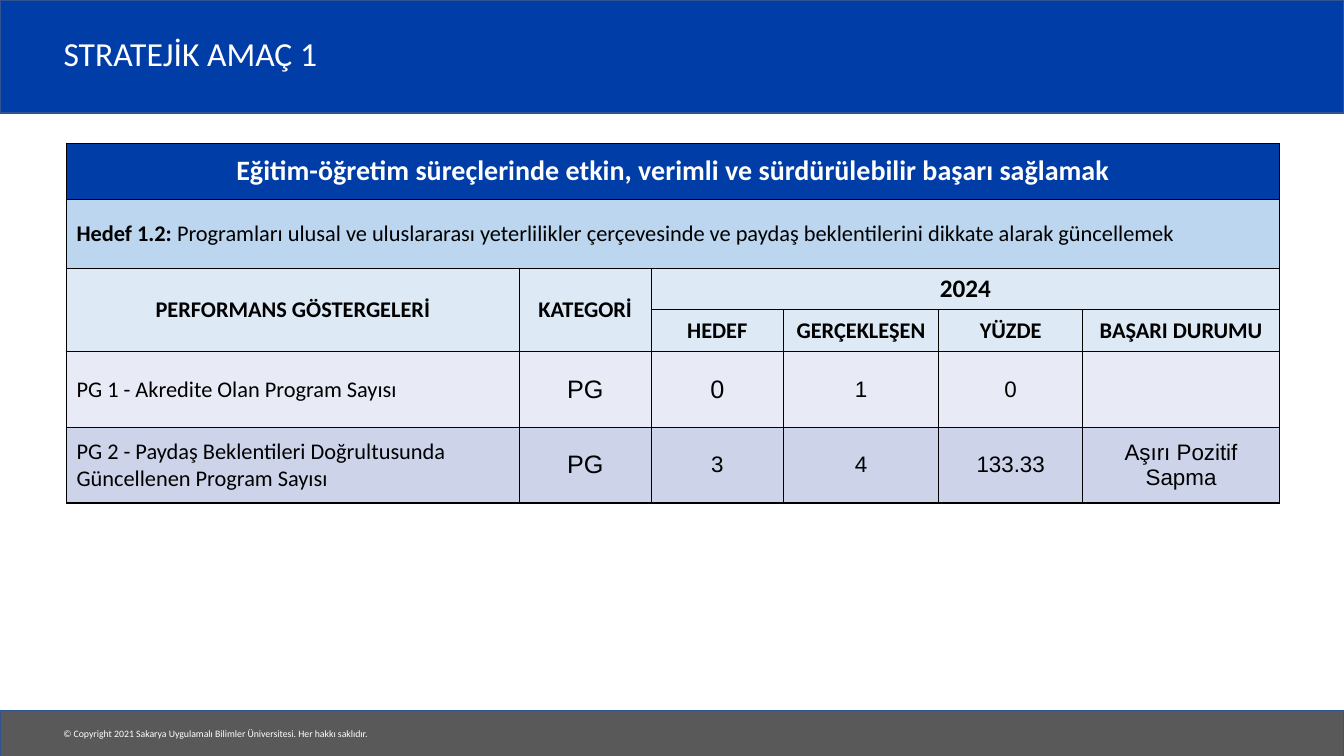
import pptx
import pptx.util
import pptx.dml.color
import pptx.enum.shapes
import pptx.enum.text
import pptx.oxml
import pptx.oxml.ns
from dataclasses import dataclass

Inches = pptx.util.Inches
Pt = pptx.util.Pt

TITLE = "STRATEJİK AMAÇ 1"
COPYRIGHT = "© Copyright 2021 Sakarya Uygulamalı Bilimler Üniversitesi. Her hakkı saklıdır."
AIM = "Eğitim-öğretim süreçlerinde etkin, verimli ve sürdürülebilir başarı sağlamak"
GOAL_LABEL = "Hedef 1.2: "
GOAL = ("Programları ulusal ve uluslararası yeterlilikler çerçevesinde "
        "ve paydaş beklentilerini dikkate alarak güncellemek")
GROUP_HEADINGS = ["PERFORMANS GÖSTERGELERİ", "KATEGORİ"]
YEAR = "2024"
YEAR_HEADINGS = ["HEDEF", "GERÇEKLEŞEN", "YÜZDE", "BAŞARI DURUMU"]
INDICATORS = [
    ("PG 1 - Akredite Olan Program Sayısı", "PG", "0", "1", "0", ""),
    ("PG 2 - Paydaş Beklentileri Doğrultusunda Güncellenen Program Sayısı",
     "PG", "3", "4", "133.33", "Aşırı Pozitif Sapma"),
]
LARGE_VALUES = {(0, 1), (0, 2), (1, 1)}
COLUMN_WIDTHS = [4.49, 1.31, 1.31, 1.54, 1.43, 1.95]
ROW_HEIGHTS = [0.56, 0.68, 0.41, 0.42, 0.75, 0.75]


@dataclass(frozen=True)
class Theme:
    heading_font: str = "Calibri"
    value_font: str = "Arial"
    blue: str = "003DA6"
    outline: str = "31538F"
    grey: str = "595959"
    goal: str = "BBD6EE"
    heading: str = "DDEAF6"
    stripes: tuple = ("E8EBF5", "CDD4EA")
    white: str = "FFFFFF"
    black: str = "000000"
    title_size: int = 24
    aim_size: int = 20
    large_size: int = 18
    table_size: int = 16
    copyright_size: int = 7


theme = Theme()
CENTER = pptx.enum.text.PP_ALIGN.CENTER
LEFT = pptx.enum.text.PP_ALIGN.LEFT
MIDDLE = pptx.enum.text.MSO_ANCHOR.MIDDLE


def color(value):
    return pptx.dml.color.RGBColor.from_string(value)


def add_span(para, text, size, ink=theme.black, bold=False, font=theme.heading_font):
    span = para.add_run()
    span.text = text
    span.font.name = font
    span.font.size = Pt(size)
    span.font.bold = bold
    span.font.color.rgb = color(ink)


def add_band(page, top, height, fill):
    band = page.shapes.add_shape(pptx.enum.shapes.MSO_SHAPE.RECTANGLE, 0, Inches(top),
                                 Inches(13.33), Inches(height))
    band.shadow.inherit = False
    band.fill.solid()
    band.fill.fore_color.rgb = color(fill)
    band.line.color.rgb = color(theme.outline)
    band.line.width = Pt(1)
    return band


def frame_cell(cell, fill):
    properties = cell._tc.get_or_add_tcPr()
    for side in ("lnL", "lnR", "lnT", "lnB"):
        properties.append(pptx.oxml.parse_xml(
            f'<a:{side} {pptx.oxml.ns.nsdecls("a")} w="12700"><a:solidFill>'
            f'<a:srgbClr val="{theme.black}"/></a:solidFill></a:{side}>'))
    cell.fill.solid()
    cell.fill.fore_color.rgb = color(fill)
    cell.vertical_anchor = MIDDLE


def write_cell(cell, text, size, align=CENTER, **style):
    para = cell.text_frame.paragraphs[0]
    para.alignment = align
    if text:
        add_span(para, text, size, **style)


def add_title(page):
    title = page.shapes.title
    title.left, title.top = Inches(0.53), Inches(0.19)
    title.width, title.height = Inches(11.03), Inches(0.73)
    title.text_frame.vertical_anchor = MIDDLE
    para = title.text_frame.paragraphs[0]
    para.alignment = LEFT
    para.line_spacing = 0.9
    add_span(para, TITLE, theme.title_size, theme.white)
    title.element.addprevious(add_band(page, 0, 1.12, theme.blue).element)


def add_footer(page):
    add_band(page, 7.05, 0.46, theme.grey)
    box = page.shapes.add_textbox(Inches(0.53), Inches(7.17), Inches(3.29), Inches(0.22))
    box.text_frame.word_wrap = True
    add_span(box.text_frame.paragraphs[0], COPYRIGHT, theme.copyright_size, theme.white)


def add_indicator_table(page):
    table = page.shapes.add_table(len(ROW_HEIGHTS), len(COLUMN_WIDTHS), Inches(0.66), Inches(1.42),
                                  Inches(sum(COLUMN_WIDTHS)), Inches(sum(ROW_HEIGHTS))).table
    table.first_row = table.horz_banding = False
    for column, width in zip(table.columns, COLUMN_WIDTHS):
        column.width = Inches(width)
    row_fills = [theme.blue, theme.goal, theme.heading, theme.heading, *theme.stripes]
    for row, height, fill in zip(table.rows, ROW_HEIGHTS, row_fills):
        row.height = Inches(height)
        for cell in row.cells:
            frame_cell(cell, fill)

    for first, last in [((0, 0), (0, 5)), ((1, 0), (1, 5)), ((2, 0), (3, 0)),
                        ((2, 1), (3, 1)), ((2, 2), (2, 5))]:
        table.cell(*first).merge(table.cell(*last))

    write_cell(table.cell(0, 0), AIM, theme.aim_size, ink=theme.white, bold=True)
    goal = table.cell(1, 0)
    write_cell(goal, GOAL_LABEL, theme.table_size, LEFT, bold=True)
    write_cell(goal, GOAL, theme.table_size, LEFT)
    for column, heading in enumerate(GROUP_HEADINGS):
        write_cell(table.cell(2, column), heading, theme.table_size, bold=True)
    write_cell(table.cell(2, 2), YEAR, theme.large_size, bold=True)
    for column, heading in enumerate(YEAR_HEADINGS, start=2):
        write_cell(table.cell(3, column), heading, theme.table_size, bold=True)

    for index, (name, *values) in enumerate(INDICATORS):
        write_cell(table.cell(4 + index, 0), name, theme.table_size, LEFT)
        for column, value in enumerate(values, start=1):
            size = theme.large_size if (index, column) in LARGE_VALUES else theme.table_size
            write_cell(table.cell(4 + index, column), value, size, font=theme.value_font)


def main():
    deck = pptx.Presentation()
    deck.slide_width, deck.slide_height = Inches(13.33), Inches(7.5)
    page = deck.slides.add_slide(deck.slide_layouts[5])
    add_title(page)
    add_footer(page)
    add_indicator_table(page)
    deck.save("out.pptx")


if __name__ == "__main__":
    main()
